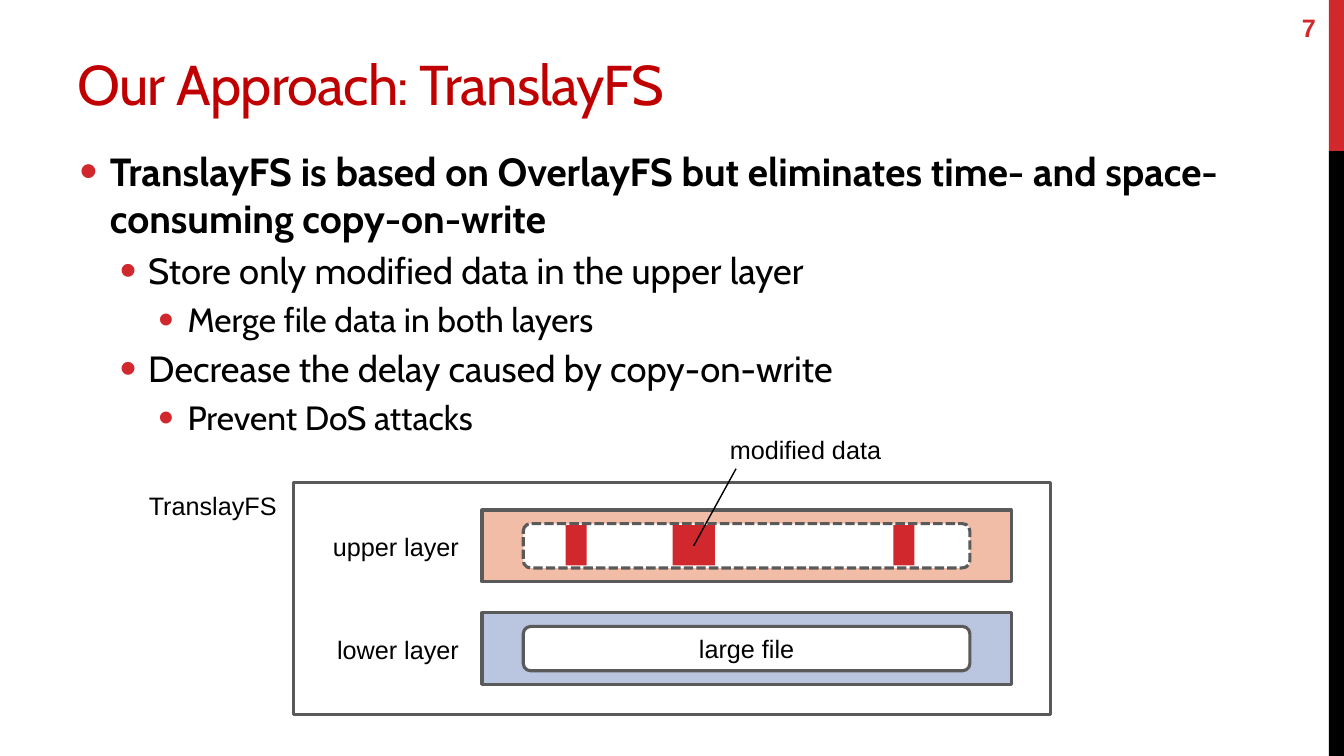
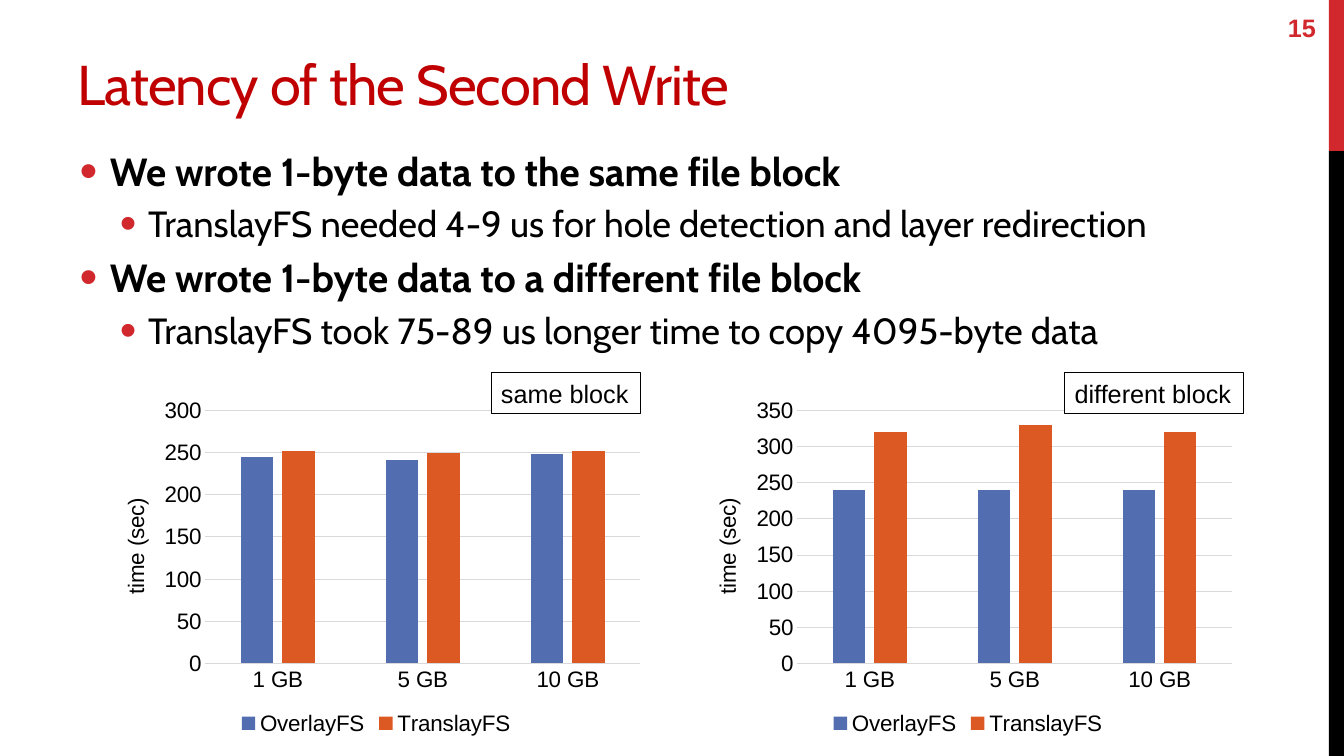
from lxml import etree
from pptx import Presentation
from pptx.chart.data import CategoryChartData
from pptx.dml.color import RGBColor
from pptx.enum.chart import XL_CHART_TYPE as ChartType, XL_LEGEND_POSITION as LegendPosition
from pptx.enum.chart import XL_TICK_MARK as TickMark
from pptx.enum.dml import MSO_LINE_DASH_STYLE as Dash
from pptx.enum.shapes import MSO_CONNECTOR, MSO_SHAPE as Preset
from pptx.enum.text import MSO_ANCHOR as Anchor, MSO_AUTO_SIZE as AutoSize, PP_ALIGN as Align
from pptx.oxml import parse_xml
from pptx.oxml.ns import nsdecls, qn
from pptx.util import Inches, Pt

WIDTH, HEIGHT = 13.33, 7.5
RED, TITLE_RED, BLACK, WHITE = "D1282E", "C00000", "000000", "FFFFFF"
OUTLINE, GRID = "5A5A5A", "D9D9D9"
HEADING_FONT, LABEL_FONT = "Cabin", "Arial"

BAND_LEFT, BAND_SPLIT = 13.18, HEIGHT / 5
BANDS = [(RED, 0, BAND_SPLIT), (BLACK, BAND_SPLIT, HEIGHT - BAND_SPLIT)]
TITLE_BOX = (0.67, 0.17, 12.02, 1.04)
BODY_BOX = (0.67, 1.41, 12.02, 5.69)
NUMBER_BOX = (12.15, 0.07, 1, 0.4)
# Per level: size and space before in points, indent and hanging bullet in inches
LEVELS = [(28, 6, 0.3, 0.3), (26, 5.2, 0.68, 0.28), (24, 4.8, 1.07, 0.29)]

APPROACH = {
    "title": "Our Approach: TranslayFS",
    "number": "7",
    "bullets": [
        (0, "TranslayFS is based on OverlayFS but eliminates time- and space-consuming copy-on-write"),
        (1, "Store only modified data in the upper layer"),
        (2, "Merge file data in both layers"),
        (1, "Decrease the delay caused by copy-on-write"),
        (2, "Prevent DoS attacks"),
    ],
}
FRAME = (2.91, 4.79, 7.51, 2.3)
LAYER_LEFT, LAYER_TOP, LAYER_WIDTH, LAYER_HEIGHT, LAYER_STEP = 4.78, 5.06, 5.25, 0.71, 1.02
FILE_LEFT, FILE_WIDTH, FILE_HEIGHT = 5.19, 4.43, 0.44
LAYERS = [("upper layer", "F1BDA7", "", Dash.SQUARE_DOT),
          ("lower layer", "BAC5DF", "large file", None)]
CHUNKS = [(0.42, 0.21), (1.48, 0.42), (3.67, 0.21)]  # offset in the file, width

LATENCY = {
    "title": "Latency of the Second Write",
    "number": "15",
    "bullets": [
        (0, "We wrote 1-byte data to the same file block"),
        (1, "TranslayFS needed 4-9 us for hole detection and layer redirection"),
        (0, "We wrote 1-byte data to a different file block"),
        (1, "TranslayFS took 75-89 us longer time to copy 4095-byte data"),
    ],
}
FILE_SIZES = ["1 GB", "5 GB", "10 GB"]
SERIES = [("OverlayFS", "526DB0"), ("TranslayFS", "DC5924")]
CHART_TOP, CHART_WIDTH, CHART_HEIGHT = 3.9, 5.46, 3.44
CHARTS = [
    {"left": 1, "maximum": 300, "values": [(245, 241, 248), (252, 249, 252)],
     "tag": "same block", "tag_box": (4.87, 3.7, 1.48, 0.4)},
    {"left": 6.87, "maximum": 350, "values": [(240, 240, 240), (320, 330, 320)],
     "tag": "different block", "tag_box": (10.56, 3.7, 1.77, 0.4)},
]


def color(hex_text):
    return RGBColor.from_string(hex_text)


def inches(box):
    return [Inches(length) for length in box]


def set_font(font, size, name=LABEL_FONT, fill=BLACK, bold=False):
    font.size, font.name, font.bold = Pt(size), name, bold
    font.color.rgb = color(fill)


def write(shape, text, align=Align.LEFT, wrap=False, **font):
    """Put one line of label text into a shape or text box."""
    frame = shape.text_frame
    frame.text, frame.word_wrap = text, wrap
    paragraph = frame.paragraphs[0]
    paragraph.alignment = align
    set_font(paragraph.font, 18, **font)


def add_label(slide, box, text, **style):
    label = slide.shapes.add_textbox(*inches(box))
    write(label, text, **style)
    return label


def add_box(slide, box, fill, line=None, weight=2.25, preset=Preset.RECTANGLE):
    shape = slide.shapes.add_shape(preset, *inches(box))
    shape.shadow.inherit = False
    shape.fill.solid()
    shape.fill.fore_color.rgb = color(fill)
    if line:
        shape.line.color.rgb = color(line)
        shape.line.width = Pt(weight)
    else:
        shape.line.fill.background()
    return shape


def set_bullet(paragraph, indent, hanging):
    properties = paragraph._p.get_or_add_pPr()
    properties.set("marL", str(Inches(indent)))
    properties.set("indent", str(-Inches(hanging)))
    for xml in (f'<a:buClr {nsdecls("a")}><a:srgbClr val="{RED}"/></a:buClr>',
                f'<a:buSzPct {nsdecls("a")} val="130000"/>',
                f'<a:buFont {nsdecls("a")} typeface="Arial"/>',
                f'<a:buChar {nsdecls("a")} char="•"/>'):
        properties.append(parse_xml(xml))


def place_placeholders(layout):
    for placeholder, box in zip(layout.placeholders, (TITLE_BOX, BODY_BOX)):
        (placeholder.left, placeholder.top,
         placeholder.width, placeholder.height) = inches(box)


def add_bands(layout, slide):
    """Draw the side bands and hand them to the layout, so that all slides share them."""
    for fill, top, height in BANDS:
        band = add_box(slide, (BAND_LEFT, top, WIDTH - BAND_LEFT, height), fill)
        layout.shapes.element.append(band.element)


def fill_slide(slide, content):
    """Fill the title, bullets and page number that every slide has."""
    title, body = slide.placeholders
    title_frame, frame = title.text_frame, body.text_frame
    title_frame.text = content["title"]
    title_frame.vertical_anchor = Anchor.BOTTOM
    title_frame.auto_size = frame.auto_size = AutoSize.NONE
    heading = title_frame.paragraphs[0]
    heading.alignment = Align.LEFT
    set_font(heading.font, 40, HEADING_FONT, TITLE_RED)
    heading.runs[0]._r.get_or_add_rPr().set("spc", "-60")

    frame.margin_left = frame.margin_right = Inches(0.12)
    frame.text = "\n".join(text for _, text in content["bullets"])
    for paragraph, (level, _) in zip(frame.paragraphs, content["bullets"]):
        size, before, indent, hanging = LEVELS[level]
        paragraph.level = level
        paragraph.space_before = Pt(before)
        set_bullet(paragraph, indent, hanging)
        set_font(paragraph.font, size, HEADING_FONT, bold=level == 0)

    number = add_label(slide, NUMBER_BOX, content["number"], align=Align.RIGHT,
                       wrap=True, fill=RED, bold=True)
    number.text_frame.vertical_anchor = Anchor.MIDDLE


def draw_layers(slide):
    add_box(slide, FRAME, WHITE, OUTLINE)
    add_label(slide, (1.37, 4.82, 1.48, 0.4), "TranslayFS", align=Align.CENTER)
    inset = (LAYER_HEIGHT - FILE_HEIGHT) / 2
    for row, (name, fill, file_text, dash) in enumerate(LAYERS):
        top = LAYER_TOP + row * LAYER_STEP
        add_box(slide, (LAYER_LEFT, top, LAYER_WIDTH, LAYER_HEIGHT), fill, OUTLINE)
        add_label(slide, (3.19, top + 0.16, 1.46, 0.4), name, align=Align.RIGHT)
        file_box = add_box(slide, (FILE_LEFT, top + inset, FILE_WIDTH, FILE_HEIGHT),
                           WHITE, OUTLINE, preset=Preset.ROUNDED_RECTANGLE)
        if dash:
            file_box.line.dash_style = dash
        if file_text:
            write(file_box, file_text, align=Align.CENTER)
    for offset, width in CHUNKS:
        add_box(slide, (FILE_LEFT + offset, LAYER_TOP + 0.15, width, 0.4), RED)

    add_label(slide, (7.14, 4.26, 1.72, 0.4), "modified data")
    offset, width = CHUNKS[1]
    pointer = slide.shapes.add_connector(
        MSO_CONNECTOR.STRAIGHT,
        *inches((7.3, 4.65, FILE_LEFT + offset + width / 2, LAYER_TOP + LAYER_HEIGHT / 2)))
    pointer.line.color.rgb = color(BLACK)
    pointer.line.width = Pt(1)
    etree.SubElement(pointer.element.spPr, qn("a:effectLst"))


def set_layout(element, index, inner=False, **shares):
    """Place a chart part by shares of the chart's size."""
    for old in element.findall(qn("c:layout")):
        element.remove(old)
    layout = etree.Element(qn("c:layout"))
    manual = etree.SubElement(layout, qn("c:manualLayout"))
    settings = {"layoutTarget": "inner"} if inner else {}
    settings.update(xMode="edge", yMode="edge", **shares)
    for name, value in settings.items():
        etree.SubElement(manual, qn(f"c:{name}")).set("val", str(value))
    element.insert(index, layout)


def style_axes(chart, maximum):
    categories, values = chart.category_axis, chart.value_axis
    for axis in (categories, values):
        axis.major_tick_mark = axis.minor_tick_mark = TickMark.NONE
    values.minimum_scale, values.maximum_scale, values.major_unit = 0, maximum, 50
    values.format.line.fill.background()
    values.has_major_gridlines = True
    for line in (categories.format.line, values.major_gridlines.format.line):
        line.color.rgb = color(GRID)
        line.width = Pt(0.75)

    title = values.axis_title
    title.text_frame.text = "time (sec)"
    set_font(title.text_frame.paragraphs[0].font, 16)
    direction = title.text_frame._txBody.bodyPr
    direction.set("rot", "-5400000")
    direction.set("vert", "horz")
    set_layout(title._element, 1, x=0.03, y=0.29)


def draw_chart(slide, content):
    data = CategoryChartData()
    data.categories = FILE_SIZES
    for (name, _), values in zip(SERIES, content["values"]):
        data.add_series(name, values)
    box = (content["left"], CHART_TOP, CHART_WIDTH, CHART_HEIGHT)
    chart = slide.shapes.add_chart(ChartType.COLUMN_CLUSTERED, *inches(box), data).chart
    set_font(chart.font, 16)
    chart.has_title = False
    chart.has_legend = True
    chart.legend.position = LegendPosition.BOTTOM
    chart.legend.include_in_layout = False
    style_axes(chart, content["maximum"])

    plot = chart.plots[0]
    plot.gap_width, plot.overlap, plot.vary_by_categories = 219, -27, False
    for series, (_, fill) in zip(plot.series, SERIES):
        series.format.fill.solid()
        series.format.fill.fore_color.rgb = color(fill)
    set_layout(chart._chartSpace.chart.plotArea, 0, inner=True, x=0.19, y=0.05, w=0.79, h=0.73)

    tag = add_box(slide, content["tag_box"], WHITE, BLACK, weight=0.75)
    write(tag, content["tag"])


def main():
    presentation = Presentation()
    presentation.slide_width, presentation.slide_height = inches((WIDTH, HEIGHT))
    layout = presentation.slide_layouts[1]
    place_placeholders(layout)
    approach, latency = [presentation.slides.add_slide(layout) for _ in range(2)]
    add_bands(layout, approach)

    fill_slide(approach, APPROACH)
    draw_layers(approach)

    fill_slide(latency, LATENCY)
    for content in CHARTS:
        draw_chart(latency, content)
    presentation.save("out.pptx")


if __name__ == "__main__":
    main()
